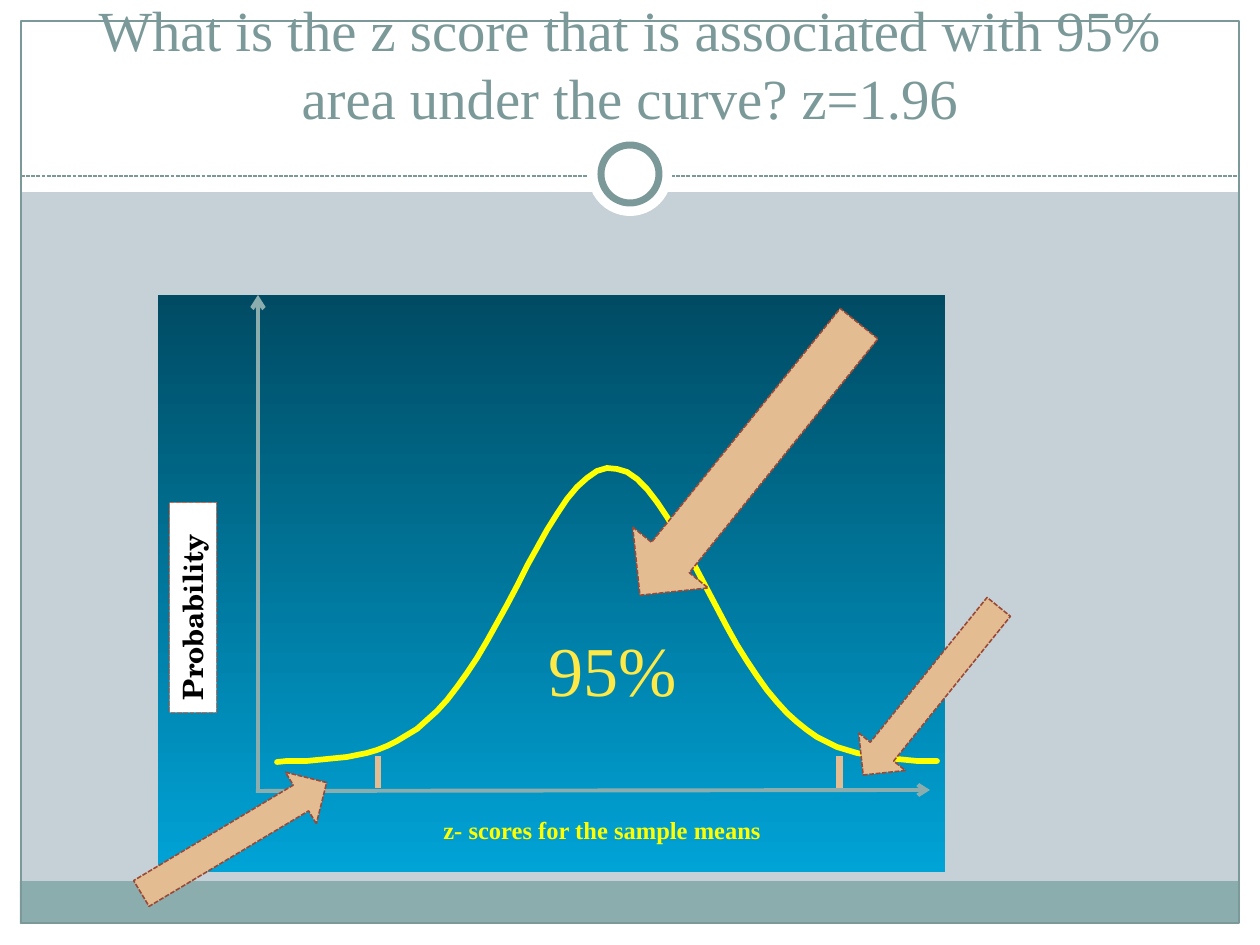
import math

import lxml.etree
import pptx
import pptx.dml.color
import pptx.enum.dml
import pptx.enum.shapes
import pptx.enum.text
import pptx.oxml.ns
import pptx.util

PX = 914400 / 126
WIDTH, HEIGHT = 1260, 945
SERIF = "Times New Roman"
SHAPES = pptx.enum.shapes.MSO_SHAPE
COLORS = {
    "backdrop": "C5D1D7", "white": "FFFFFF", "black": "000000",
    "sage": "7C999A", "footer": "8CADAE", "yellow": "FFFF00",
    "gold": "FFE947", "tan": "E3BC92", "brick": "D16349",
    "brown": "9B4936", "deep": "004B63", "sky": "00A3D6",
}


def emu(length):
    """Turn px into EMU."""
    return pptx.util.Emu(round(length * PX))


def rgb(name):
    """Look up a colour of the palette."""
    return pptx.dml.color.RGBColor.from_string(COLORS[name])


def style_line(line, color, weight, dashed=False):
    """Set the colour, weight and dash of an outline."""
    line.color.rgb = rgb(color)
    line.width = pptx.util.Pt(weight)
    if dashed:
        line.dash_style = pptx.enum.dml.MSO_LINE.SQUARE_DOT


def style_shape(shape, fill=None, line=None, weight=0.75, dashed=False):
    """Give a shape its fill and outline, without shadow."""
    shape.shadow.inherit = False
    if fill:
        shape.fill.solid()
        shape.fill.fore_color.rgb = rgb(fill)
    else:
        shape.fill.background()
    if line:
        style_line(shape.line, line, weight, dashed)
    else:
        shape.line.fill.background()


def add_block(slide, box, kind=SHAPES.RECTANGLE, rotation=0, **style):
    """Add a preset shape."""
    block = slide.shapes.add_shape(kind, *map(emu, box))
    block.rotation = rotation
    style_shape(block, **style)
    return block


def add_rule(slide, start, end, color, weight, dashed=False, arrow=False):
    """Add a straight line, with an optional arrowhead at its end."""
    rule = slide.shapes.add_connector(
        pptx.enum.shapes.MSO_CONNECTOR.STRAIGHT, *map(emu, start + end))
    style_line(rule.line, color, weight, dashed)
    qn = pptx.oxml.ns.qn
    if arrow:
        lxml.etree.SubElement(rule.line._get_or_add_ln(), qn("a:tailEnd"), type="arrow")
    lxml.etree.SubElement(rule._element.spPr, qn("a:effectLst"))


def write(shape, text, size, color, font=SERIF, bold=False, centered=False,
          bottom=False, wrap=True):
    """Write formatted text into a shape or text box."""
    align, anchor = pptx.enum.text.PP_ALIGN, pptx.enum.text.MSO_ANCHOR
    frame = shape.text_frame
    frame.word_wrap = wrap
    frame.vertical_anchor = anchor.BOTTOM if bottom else anchor.TOP
    paragraph = frame.paragraphs[0]
    paragraph.alignment = align.CENTER if centered else align.LEFT
    run = paragraph.add_run()
    run.text = text
    run.font.name = font
    run.font.size = pptx.util.Pt(size)
    run.font.bold = bold
    run.font.color.rgb = rgb(color)


def add_label(slide, box, text, size, color, **format):
    """Add a text box."""
    write(slide.shapes.add_textbox(*map(emu, box)), text, size, color, **format)


def add_bell_curve(slide, center=611, sigma=93, base=762, peak=294):
    """Draw the normal curve from its formula."""
    points = [(x, base - peak * math.exp(-((x - center) / sigma) ** 2 / 2))
              for x in range(277, 938, 10)]
    builder = slide.shapes.build_freeform(*points[0], scale=PX)
    builder.add_line_segments(points[1:], close=False)
    curve = builder.convert_to_shape()
    style_shape(curve, line="yellow", weight=3.25)
    curve.line._get_or_add_ln().set("cap", "rnd")


def add_frame(slide):
    """Draw the margins, footer band, border and ring."""
    for box in [(0, 924, WIDTH, 21), (0, 0, WIDTH, 192),
                (0, 0, 21, HEIGHT), (1239, 0, 21, HEIGHT)]:
        add_block(slide, box, fill="white")
    add_block(slide, (20, 881, 1218, 43), fill="footer")
    add_block(slide, (21, 21, 1218, 902), line="sage")
    add_rule(slide, (21, 176), (1239, 176), "sage", 0.75, dashed=True)
    add_block(slide, (588, 132, 84, 84), SHAPES.OVAL, fill="white")
    add_block(slide, (601, 145, 58, 58), SHAPES.OVAL, fill="white", line="sage", weight=4)


def add_plot(slide):
    """Draw the plot panel with its axes, curve and axis titles."""
    panel = add_block(slide, (158, 295, 787, 577))
    panel.fill.gradient()
    panel.fill.gradient_angle = 270
    for stop, color in zip(panel.fill.gradient_stops, ("deep", "sky")):
        stop.color.rgb = rgb(color)
        stop.position = 0 if color == "deep" else 1
    add_rule(slide, (256, 791), (930, 790), "footer", 2.25, arrow=True)
    add_rule(slide, (258, 791), (258, 295), "footer", 2.5, arrow=True)
    add_bell_curve(slide)
    y_title = add_block(slide, (88, 584, 210, 47), rotation=270, fill="white",
                        line="brick", weight=0.9, dashed=True)
    write(y_title, "Probability", 16, "black", font="TeX Gyre Schola", bold=True)
    add_label(slide, (431, 809, 345, 43), "z- scores for the sample means", 14,
              "yellow", bold=True, wrap=False)


def add_pointers(slide):
    """Draw the cut-off ticks and the block arrows."""
    for x in (378, 840):
        add_rule(slide, (x, 756), (x, 788), "tan", 4)
    for box, rotation in [((701, 285, 97, 349), 38.9), ((901, 583, 60, 216), 38.9),
                          ((204, 730, 60, 216), 239.1)]:
        add_block(slide, box, SHAPES.DOWN_ARROW, rotation, fill="tan",
                  line="brown", weight=0.9, dashed=True)


def main():
    """Build the slide and save it."""
    deck = pptx.Presentation()
    deck.slide_width, deck.slide_height = emu(WIDTH), emu(HEIGHT)
    slide = deck.slides.add_slide(deck.slide_layouts[6])
    slide.background.fill.solid()
    slide.background.fill.fore_color.rgb = rgb("backdrop")
    add_frame(slide)
    add_label(slide, (42, 32, 1176, 105),
              "What is the z score that is associated with 95% area under the curve? z=1.96",
              32.4, "sage", centered=True, bottom=True)
    add_plot(slide)
    add_pointers(slide)
    add_label(slide, (536, 620, 158, 97), "95%", 40, "gold")
    deck.save("out.pptx")


if __name__ == "__main__":
    main()
